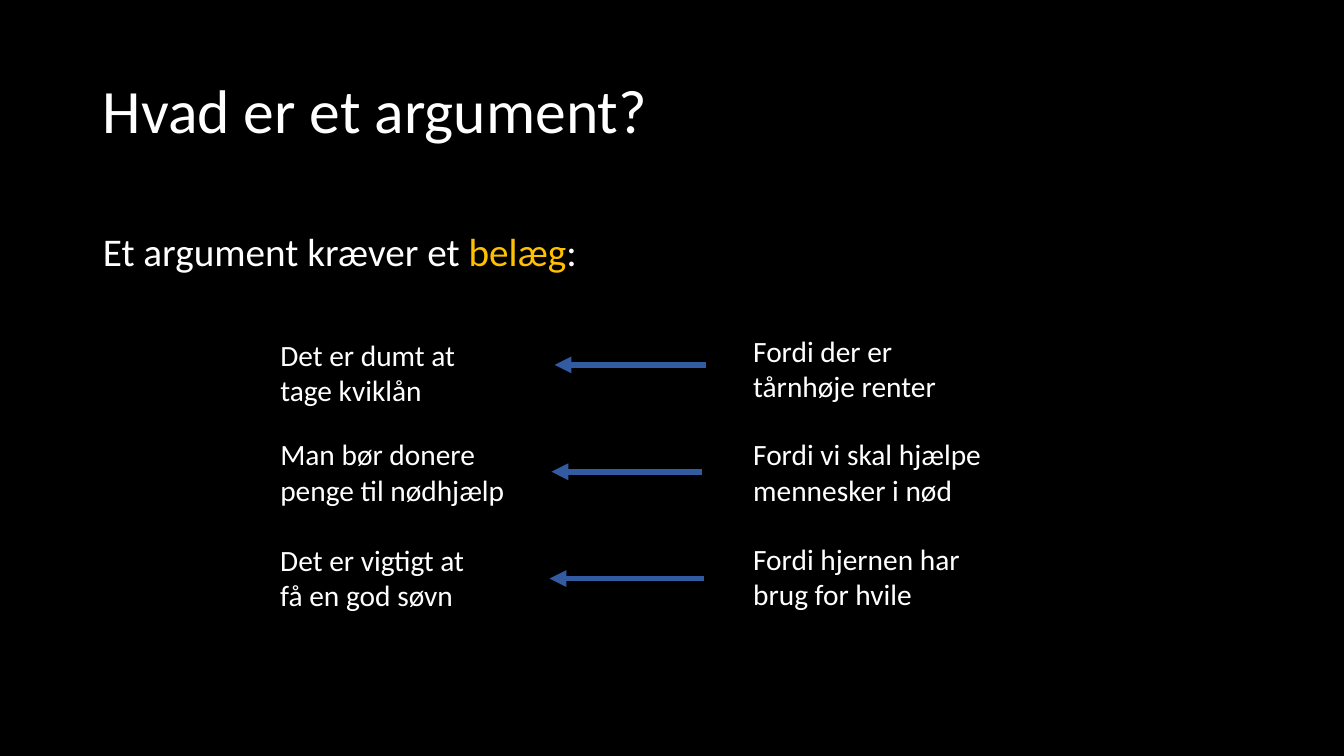
import dataclasses
import typing

import lxml.etree
import pptx
import pptx.dml.color
import pptx.enum.shapes
import pptx.enum.text
import pptx.oxml.ns
import pptx.util

PX = 9144
WHITE, GOLD, BLUE, BLACK = "FFFFFF", "FFC000", "335BA2", "000000"
CLAIM_LEFT, REASON_LEFT, TEXT_HEIGHT = 275, 744, 76
ANCHOR = pptx.enum.text.MSO_ANCHOR
AUTO_SIZE = pptx.enum.text.MSO_AUTO_SIZE


@dataclasses.dataclass
class Statement:
    text: str
    top: int
    width: int


@dataclasses.dataclass
class Argument:
    claim: Statement
    reason: Statement
    arrow_start: int
    arrow_end: int
    arrow_y: int


ARGUMENTS = [
    Argument(Statement("Det er dumt at tage kviklån", 331, 225),
             Statement("Fordi der er tårnhøje renter", 327, 218), 700, 550, 362),
    Argument(Statement("Man bør donere penge til nødhjælp", 430, 261),
             Statement("Fordi vi skal hjælpe mennesker i nød", 430, 261), 696, 547, 468),
    Argument(Statement("Det er vigtigt at få en god søvn", 535, 194),
             Statement("Fordi hjernen har brug for hvile", 534, 230), 698, 545, 574),
]


def px(length: int) -> pptx.util.Emu:
    return pptx.util.Emu(length * PX)


def colour(value: str) -> pptx.dml.color.RGBColor:
    return pptx.dml.color.RGBColor.from_string(value)


def apply(target: typing.Any, values: dict[str, typing.Any]) -> None:
    for name, value in values.items():
        setattr(target, name, value)


def add_span(para: typing.Any, text: str, size: int, hue: str = WHITE) -> None:
    span = para.add_run()
    span.text = text
    apply(span.font, {"name": "Calibri", "size": pptx.util.Pt(size)})
    span.font.color.rgb = colour(hue)


def place(shape: typing.Any, left: int, top: int, width: int, height: int) -> None:
    apply(shape, {"left": px(left), "top": px(top), "width": px(width), "height": px(height)})


def fill_placeholder(shape: typing.Any, size: int, anchor: typing.Any,
                     spans: list[tuple[str, str]]) -> None:
    apply(shape.text_frame, {"auto_size": AUTO_SIZE.NONE, "vertical_anchor": anchor})
    para = shape.text_frame.paragraphs[0]
    properties = para._p.get_or_add_pPr()
    apply_indent = {"marL": "0", "indent": "0"}
    for name, value in apply_indent.items():
        properties.set(name, value)
    lxml.etree.SubElement(properties, pptx.oxml.ns.qn("a:buNone"))
    apply(para, {"alignment": pptx.enum.text.PP_ALIGN.LEFT, "line_spacing": 0.9,
                 "space_before": pptx.util.Pt(0)})
    for text, hue in spans:
        add_span(para, text, size, hue)


def add_statement(page: typing.Any, left: int, statement: Statement) -> None:
    box = page.shapes.add_textbox(px(left), px(statement.top), px(statement.width), px(TEXT_HEIGHT))
    margins = {f"margin_{side}": px(3) for side in ("left", "top", "right", "bottom")}
    apply(box.text_frame, {"word_wrap": True, "auto_size": AUTO_SIZE.SHAPE_TO_FIT_TEXT,
                           "vertical_anchor": ANCHOR.MIDDLE, **margins})
    add_span(box.text_frame.paragraphs[0], statement.text, 21)


def add_arrow(page: typing.Any, start: int, end: int, y: int) -> None:
    arrow = page.shapes.add_connector(
        pptx.enum.shapes.MSO_CONNECTOR.STRAIGHT, px(start), px(y), px(end), px(y))
    arrow.line.width = pptx.util.Pt(4)
    arrow.line.color.rgb = colour(BLUE)
    lxml.etree.SubElement(arrow.line._get_or_add_ln(), pptx.oxml.ns.qn("a:tailEnd"), type="triangle")
    lxml.etree.SubElement(arrow._element.spPr, pptx.oxml.ns.qn("a:effectLst"))


def main() -> None:
    deck = pptx.Presentation()
    apply(deck, {"slide_width": px(1333), "slide_height": px(750)})
    page = deck.slides.add_slide(deck.slide_layouts[1])
    page.background.fill.solid()
    page.background.fill.fore_color.rgb = colour(BLACK)

    title, body = page.shapes.title, page.placeholders[1]
    place(title, 92, 40, 1150, 145)
    fill_placeholder(title, 44, ANCHOR.MIDDLE, [("Hvad er et argument?", WHITE)])
    place(body, 92, 226, 1150, 450)
    fill_placeholder(body, 28, ANCHOR.TOP,
                     [("Et argument kræver et ", WHITE), ("belæg", GOLD), (":", WHITE)])

    for argument in ARGUMENTS:
        add_statement(page, CLAIM_LEFT, argument.claim)
        add_statement(page, REASON_LEFT, argument.reason)
        add_arrow(page, argument.arrow_start, argument.arrow_end, argument.arrow_y)

    deck.save("out.pptx")


if __name__ == "__main__":
    main()
